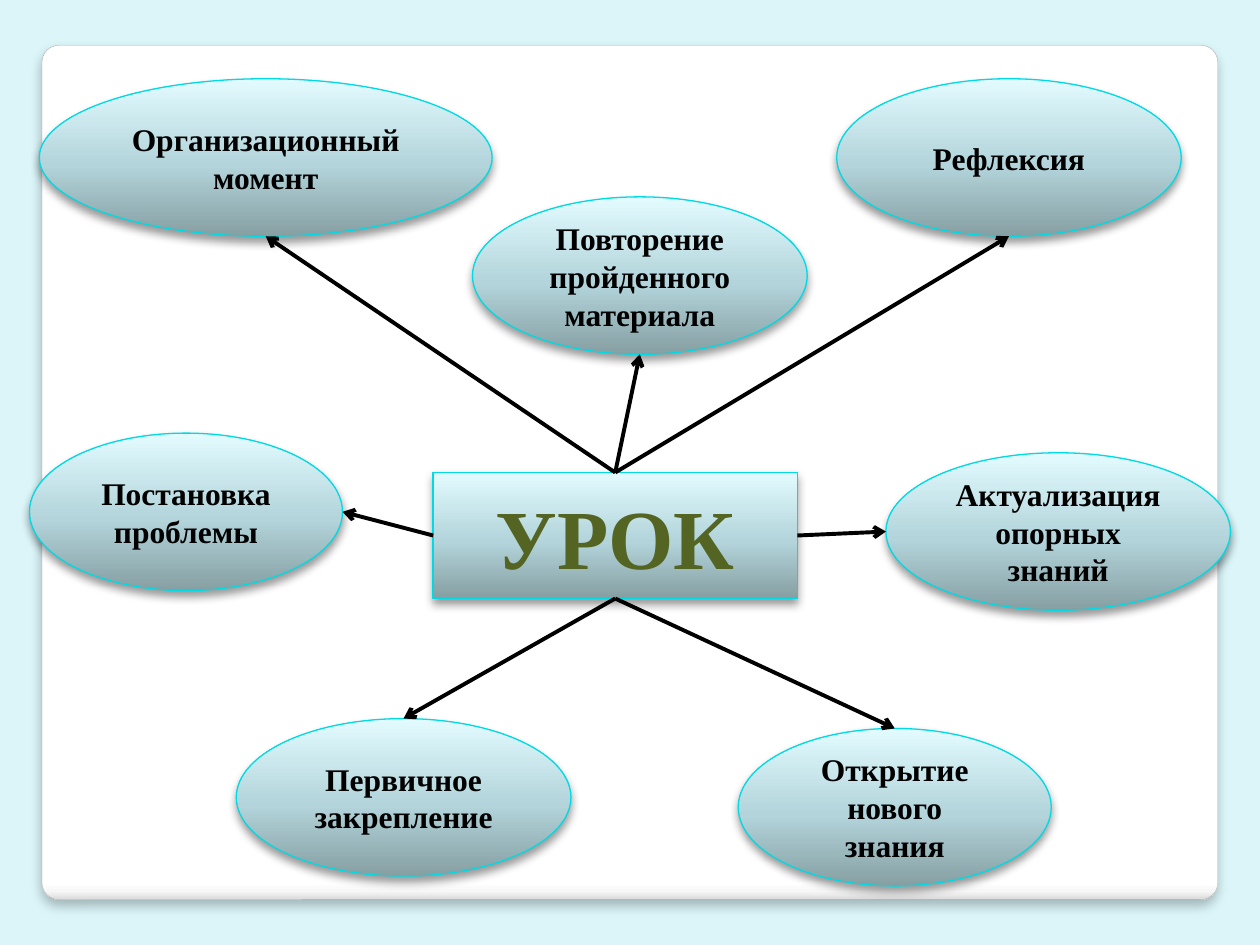
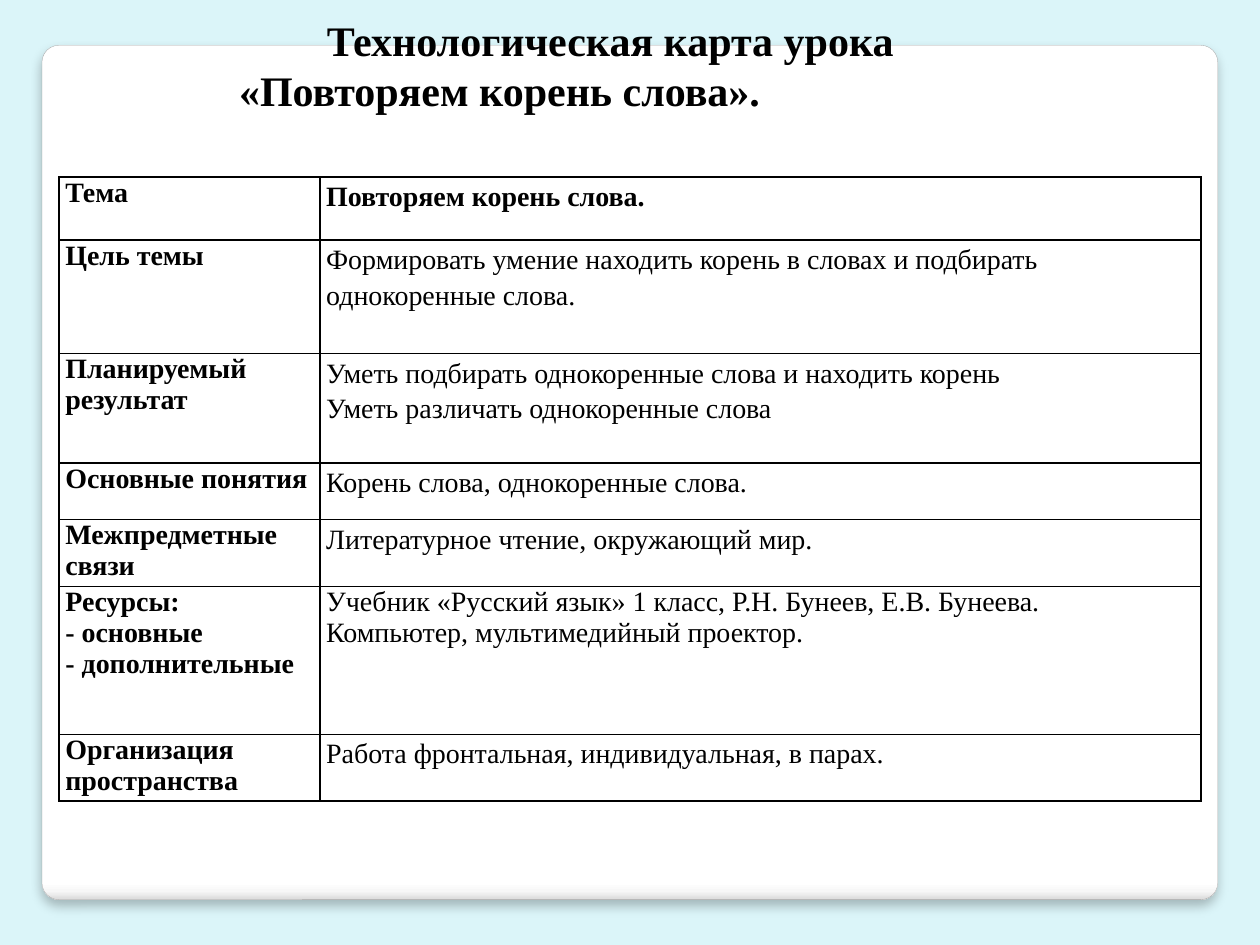
from dataclasses import dataclass
from lxml.etree import SubElement
from pptx import Presentation
from pptx.dml.color import RGBColor
from pptx.enum.shapes import MSO_CONNECTOR as Connector, MSO_SHAPE as Preset
from pptx.enum.text import MSO_ANCHOR as Anchor, MSO_AUTO_SIZE as AutoSize, PP_ALIGN as Align
from pptx.oxml.ns import qn
from pptx.util import Inches, Pt

COLUMNS, ROWS = 64, 48


@dataclass(frozen=True)
class Theme:
    font: str = "Times New Roman"
    background: str = "DBF5F9"
    text: str = "000000"
    accent: str = "546422"
    outline: str = "00DAE4"
    panel_outline: str = "A4A4A4"
    panel_stops: tuple = ((0, "FFFFFF"), (98, "FFFFFF"), (99, "F7F7F7"), (100, "DADADA"))
    bubble_stops: tuple = ((0, "869FA3"), (45, "B2D4DA"), (100, "E2FBFF"))
    panel_shadow: tuple = (25, 6, 4)
    bubble_shadow: tuple = (40, 5.2, 3)
    center_size: int = 48
    title_size: int = 24
    bubble_size: int = 18
    table_size: int = 16


def set_values(target, values):
    for name, value in values.items():
        setattr(target, name, value)


def add_color(parent, color):
    return SubElement(parent, qn("a:srgbClr"), val=color)


class Deck:
    def __init__(self, theme):
        self.theme = theme
        self.presentation = Presentation()
        set_values(self.presentation, {"slide_width": Inches(10), "slide_height": Inches(7.5)})
        self.slide = None

    def across(self, columns):
        return round(self.presentation.slide_width * columns / COLUMNS)

    def down(self, rows):
        return round(self.presentation.slide_height * rows / ROWS)

    def place(self, left, top, width, height):
        return self.across(left), self.down(top), self.across(width), self.down(height)

    def add_slide(self, layout):
        self.slide = self.presentation.slides.add_slide(self.presentation.slide_layouts[layout])

    def set_text(self, frame, lines, size, color=None, bold=True, **paragraph_values):
        frame.text = "\n".join(lines)
        for paragraph in frame.paragraphs:
            set_values(paragraph, paragraph_values)
            for run in paragraph.runs:
                set_values(run.font, {"name": self.theme.font, "size": Pt(size), "bold": bold})
                run.font.color.rgb = RGBColor.from_string(color or self.theme.text)

    def shade(self, shape, stops, angle, outline, width, shadow):
        shape.fill.gradient()
        shape.fill.gradient_angle = angle
        properties = shape.element.spPr
        stop_list = properties.find(".//" + qn("a:gsLst"))
        stop_list.clear()
        for position, color in stops:
            add_color(SubElement(stop_list, qn("a:gs"), pos=str(position * 1000)), color)
        shape.line.color.rgb = RGBColor.from_string(outline)
        shape.line.width = Pt(width)
        shape.shadow.inherit = False
        opacity, blur, distance = shadow
        outer = SubElement(properties.find(qn("a:effectLst")), qn("a:outerShdw"),
                           blurRad=str(Pt(blur)), dist=str(Pt(distance)),
                           dir="5400000", rotWithShape="0")
        SubElement(add_color(outer, "000000"), qn("a:alpha"), val=str(opacity * 1000))

    def add_master_panel(self):
        master = self.presentation.slide_master
        master.background.fill.solid()
        master.background.fill.fore_color.rgb = RGBColor.from_string(self.theme.background)
        panel = self.slide.shapes.add_shape(
            Preset.ROUNDED_RECTANGLE, *self.place(2.13, 2.3, 59.73, 43.4))
        panel.adjustments[0] = 0.02
        self.shade(panel, self.theme.panel_stops, 270, self.theme.panel_outline, 0.16,
                   self.theme.panel_shadow)
        master.shapes.element.insert(2, panel.element)

    def add_bubble(self, preset, box, text, size, color=None):
        shape = self.slide.shapes.add_shape(preset, *self.place(*box))
        self.shade(shape, self.theme.bubble_stops, 90, self.theme.outline, 0.75,
                   self.theme.bubble_shadow)
        self.set_text(shape.text_frame, [text], size, color, alignment=Align.CENTER)
        return shape

    def add_arrow(self, center, site, stage):
        share_x, share_y = {0: (0.5, 1), 1: (1, 0.5), 2: (0.5, 0), 3: (0, 0.5)}[site]
        arrow = self.slide.shapes.add_connector(
            Connector.STRAIGHT, center.left, center.top,
            round(stage.left + stage.width * share_x),
            round(stage.top + stage.height * share_y))
        arrow.begin_connect(center, site)
        arrow.line.color.rgb = RGBColor.from_string(self.theme.text)
        arrow.line.width = Pt(2.25)
        properties = arrow.element.spPr
        SubElement(properties.find(qn("a:ln")), qn("a:tailEnd"), type="arrow")
        SubElement(properties, qn("a:effectLst"))

    def add_title(self, box, lines):
        title = self.slide.shapes.title
        set_values(title, dict(zip(("left", "top", "width", "height"), self.place(*box))))
        frame = title.text_frame
        set_values(frame, {"auto_size": AutoSize.NONE, "word_wrap": True,
                           "vertical_anchor": Anchor.MIDDLE,
                           "margin_top": 0, "margin_bottom": self.down(2.2)})
        self.set_text(frame, lines, self.theme.title_size, alignment=Align.CENTER)
        frame.paragraphs[-1].alignment = Align.LEFT

    def add_border(self, cell):
        properties = cell._tc.get_or_add_tcPr()
        for index, side in enumerate(("a:lnL", "a:lnR", "a:lnT", "a:lnB")):
            line = SubElement(properties, qn(side), w=str(Pt(1)))
            add_color(SubElement(line, qn("a:solidFill")), self.theme.text)
            properties.insert(index, line)

    def add_table(self, box, widths, rows):
        table = self.slide.shapes.add_table(len(rows), len(widths), *self.place(*box)).table
        set_values(table, {"first_row": False, "horz_banding": False})
        for column, width in zip(table.columns, widths):
            column.width = self.across(width)
        for index, (height, label, value, bold, spacing) in enumerate(rows):
            table.rows[index].height = self.down(height)
            formats = ((label, True, 1.0), (value, bold, spacing))
            for column, (lines, weight, line_spacing) in enumerate(formats):
                cell = table.cell(index, column)
                set_values(cell, {"margin_left": Inches(0.05), "margin_right": Inches(0.05),
                                  "margin_top": 0, "margin_bottom": 0})
                cell.fill.background()
                self.add_border(cell)
                self.set_text(cell.text_frame, lines, self.theme.table_size, bold=weight,
                              line_spacing=line_spacing)


STAGES = [
    ("Организационный момент", (2, 4, 23, 8), 0),
    ("Актуализация опорных знаний", (45, 23, 17.5, 8), 3),
    ("Рефлексия", (42.5, 4, 17.5, 8), 0),
    ("Постановка проблемы", (1.5, 22, 15.9, 8), 1),
    ("Первичное закрепление", (12, 36.5, 17, 8), 2),
    ("Открытие нового знания", (37.5, 37, 15.9, 8), 2),
    ("Повторение пройденного материала", (24, 10, 17, 8), 0),
]

LESSON_ROWS = [
    (3.2, ["Тема"], ["Повторяем корень слова."], True, 1.15),
    (5.75, ["Цель темы"],
     ["Формировать умение находить корень в словах и подбирать однокоренные слова."], False, 1.15),
    (5.57, ["Планируемый результат"],
     ["Уметь подбирать однокоренные слова и находить корень",
      "Уметь различать однокоренные слова"], False, 1.15),
    (2.88, ["Основные понятия"], ["Корень слова, однокоренные слова."], False, 1.15),
    (3.4, ["Межпредметные связи"], ["Литературное чтение, окружающий мир."], False, 1.15),
    (7.5, ["Ресурсы:", "- основные", "- дополнительные"],
     ["Учебник «Русский язык» 1 класс, Р.Н. Бунеев, Е.В. Бунеева.",
      "Компьютер, мультимедийный проектор."], False, 1.0),
    (3.4, ["Организация пространства"],
     ["Работа фронтальная, индивидуальная, в парах."], False, 1.15),
]


def main():
    theme = Theme()
    deck = Deck(theme)

    deck.add_slide(6)
    deck.add_master_panel()
    lesson = deck.add_bubble(Preset.RECTANGLE, (22, 24, 18.5, 6.4), "УРОК",
                             theme.center_size, theme.accent)
    stages = [(deck.add_bubble(Preset.OVAL, box, text, theme.bubble_size), site)
              for text, box, site in STAGES]
    for stage, site in stages:
        deck.add_arrow(lesson, site, stage)

    deck.add_slide(5)
    deck.add_title((11.5, 1.5, 39, 5.8),
                   ["Технологическая карта урока", "«Повторяем корень слова»."])
    deck.add_table((3, 9, 58, 31.7), (13.25, 44.75), LESSON_ROWS)

    deck.presentation.save("out.pptx")


if __name__ == "__main__":
    main()
